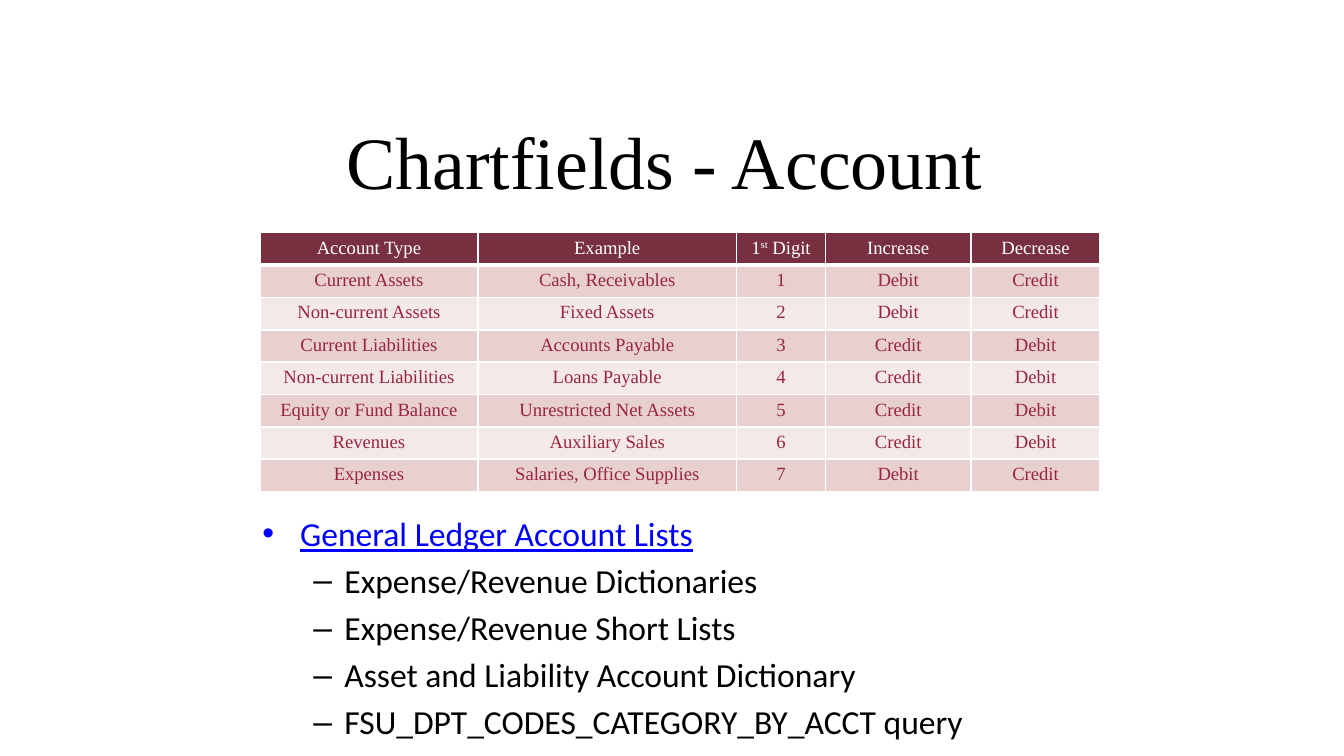
"""Build the Chartfields - Account slide."""
from typing import NamedTuple

from lxml import etree
from pptx import Presentation
from pptx.dml.color import RGBColor
from pptx.enum.text import MSO_ANCHOR, MSO_AUTO_SIZE, PP_ALIGN
from pptx.oxml.ns import qn
from pptx.util import Pt

CENTER = PP_ALIGN.CENTER
LEFT = PP_ALIGN.LEFT
MIDDLE = MSO_ANCHOR.MIDDLE
TOP = MSO_ANCHOR.TOP
NO_AUTOFIT = MSO_AUTO_SIZE.NONE

SERIF = "Times New Roman"
SANS = "Calibri"
BLACK, WHITE, BLUE = "000000", "FFFFFF", "0000FF"
GARNET, CRIMSON = "782F40", "99263E"
BANDS = ("E8D0D0", "F4E9E9")

COLUMN_WIDTHS = (116.8, 138.6, 47.6, 78, 69.2)
ROW_HEIGHT = 17.35


class Box(NamedTuple):
    """Position and size in points."""
    left: float
    top: float
    width: float
    height: float


class Account(NamedTuple):
    """One row of the account table."""
    kind: str
    example: str
    digit: str
    increase: str
    decrease: str


class ListItem(NamedTuple):
    """One bulleted line with its level and look."""
    text: str
    level: int = 1
    color: str = BLACK
    underline: bool = False


HEADINGS = ("Account Type", "Example", "1^st^ Digit", "Increase", "Decrease")
ACCOUNTS = (
    Account("Current Assets", "Cash, Receivables", "1", "Debit", "Credit"),
    Account("Non-current Assets", "Fixed Assets", "2", "Debit", "Credit"),
    Account("Current Liabilities", "Accounts Payable", "3", "Credit", "Debit"),
    Account("Non-current Liabilities", "Loans Payable", "4", "Credit", "Debit"),
    Account("Equity or Fund Balance", "Unrestricted Net Assets", "5", "Credit", "Debit"),
    Account("Revenues", "Auxiliary Sales", "6", "Credit", "Debit"),
    Account("Expenses", "Salaries, Office Supplies", "7", "Debit", "Credit"),
)
LIST_ITEMS = (
    ListItem("General Ledger Account Lists", level=0, color=BLUE, underline=True),
    ListItem("Expense/Revenue Dictionaries"),
    ListItem("Expense/Revenue Short Lists"),
    ListItem("Asset and Liability Account Dictionary"),
    ListItem("FSU_DPT_CODES_CATEGORY_BY_ACCT query"),
)
INDENTS = ((20.2, -20.2), (43.9, -16.6))


def rgb(color: str) -> RGBColor:
    """Turn a hex string into a colour."""
    return RGBColor.from_string(color)


def write(paragraph, text: str, *, font: str, size: float, color: str,
          align=LEFT, underline: bool = False) -> None:
    """Fill a paragraph, raising any part set between carets."""
    paragraph.alignment = align
    for index, part in enumerate(text.split("^")):
        run = paragraph.add_run()
        run.text = part
        run.font.name = font
        run.font.size = Pt(size)
        run.font.bold = False
        run.font.underline = underline
        run.font.color.rgb = rgb(color)
        if index % 2:
            run.font._element.set("baseline", "30000")


def place(shape, box: Box, anchor):
    """Move a placeholder and return its prepared text frame."""
    shape.left, shape.top, shape.width, shape.height = map(Pt, box)
    frame = shape.text_frame
    frame.auto_size = NO_AUTOFIT
    frame.word_wrap = True
    frame.vertical_anchor = anchor
    return frame


def set_margins(target) -> None:
    """Give a cell or text frame the slide's common margins."""
    target.margin_left = target.margin_right = Pt(5.2)
    target.margin_top = target.margin_bottom = Pt(2.7)


def add_borders(cell, bottom: float) -> None:
    """Draw white lines around a cell."""
    properties = cell._tc.get_or_add_tcPr()
    for side, width in (("L", 1), ("R", 1), ("T", 1), ("B", bottom)):
        line = etree.SubElement(properties, qn(f"a:ln{side}"), w=str(Pt(width)))
        fill = etree.SubElement(line, qn("a:solidFill"))
        etree.SubElement(fill, qn("a:srgbClr"), val=WHITE)


def add_account_table(slide, left: float, top: float) -> None:
    """Add the banded table of account types."""
    rows = (HEADINGS, *ACCOUNTS)
    table = slide.shapes.add_table(
        len(rows), len(HEADINGS), Pt(left), Pt(top),
        Pt(sum(COLUMN_WIDTHS)), Pt(ROW_HEIGHT * len(rows))).table
    for column, width in zip(table.columns, COLUMN_WIDTHS):
        column.width = Pt(width)
    for row_index, values in enumerate(rows):
        table.rows[row_index].height = Pt(ROW_HEIGHT)
        header = row_index == 0
        for column_index, text in enumerate(values):
            cell = table.cell(row_index, column_index)
            set_margins(cell)
            add_borders(cell, bottom=3 if header else 1)
            cell.fill.solid()
            cell.fill.fore_color.rgb = rgb(GARNET if header else BANDS[(row_index - 1) % 2])
            write(cell.text_frame.paragraphs[0], text, font=SERIF, size=10,
                  color=WHITE if header else CRIMSON, align=CENTER)


def fill_list(frame, items: tuple[ListItem, ...]) -> None:
    """Write the bulleted list into a text frame."""
    set_margins(frame)
    for index, item in enumerate(items):
        paragraph = frame.add_paragraph() if index else frame.paragraphs[0]
        paragraph.level = item.level
        margin, indent = INDENTS[item.level]
        properties = paragraph._p.get_or_add_pPr()
        properties.set("marL", str(Pt(margin)))
        properties.set("indent", str(Pt(indent)))
        if index == 0:
            paragraph.space_before = Pt(0)
        write(paragraph, item.text, font=SANS, size=18,
              color=item.color, underline=item.underline)


def main() -> None:
    """Build and save the presentation."""
    presentation = Presentation()
    presentation.slide_width, presentation.slide_height = Pt(720), Pt(405)
    slide = presentation.slides.add_slide(presentation.slide_layouts[1])
    title = place(slide.shapes.title, Box(166.3, 55.4, 379.4, 60.5), MIDDLE)
    write(title.paragraphs[0], "Chartfields - Account", font=SERIF, size=39.6,
          color=BLACK, align=CENTER)
    body = place(slide.placeholders[1], Box(135.4, 272.2, 537.8, 112.3), TOP)
    fill_list(body, LIST_ITEMS)
    add_account_table(slide, left=139.2, top=124.6)
    presentation.save("out.pptx")


if __name__ == "__main__":
    main()
